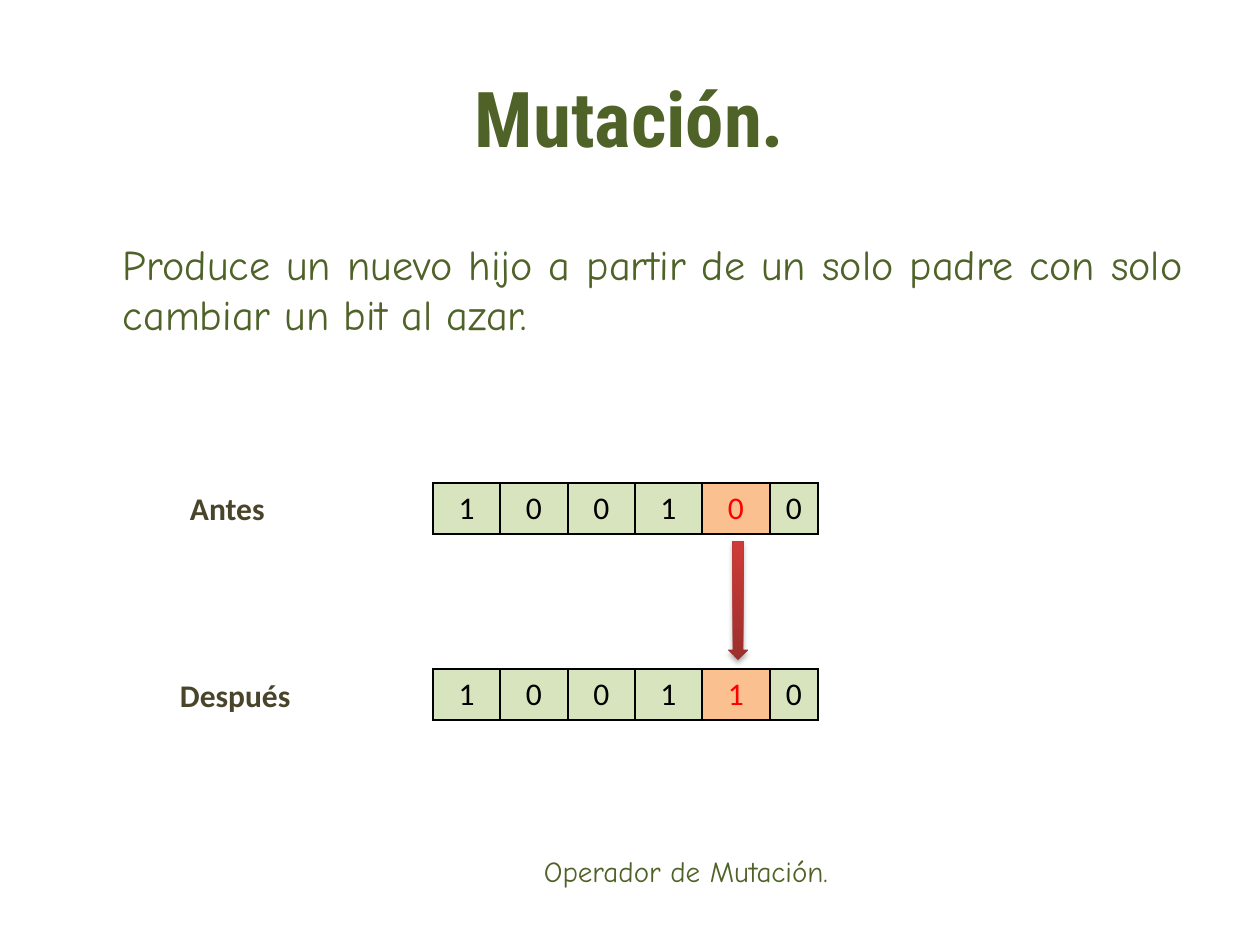
"""Build the slide that explains the mutation operator."""
import pptx
import pptx.dml.color
import pptx.enum.shapes
import pptx.enum.text
import pptx.oxml
import pptx.oxml.ns
import pptx.util

PX = 914400 / 126
ALIGN = pptx.enum.text.PP_ALIGN
ANCHOR = pptx.enum.text.MSO_ANCHOR
THEME = {
    "green": "4F6228", "brown": "4A452A", "ink": "000000", "changed": "FF0000",
    "cell": "D7E4BD", "changed_cell": "FAC090",
    "arrow_bottom": "9C2F2D", "arrow_top": "CE3B37",
    "title_font": "Roboto Condensed", "body_font": "Comic Neue", "label_font": "Calibri",
    "title": 44, "body": 24.1, "caption": 16.6, "label": 18,
}


def px(*lengths):
    return [pptx.util.Emu(round(n * PX)) for n in lengths]


def add_run(p, text, font, size, color, bold=False):
    r = p.add_run()
    r.text = text
    r.font.name = THEME[font]
    r.font.size = pptx.util.Pt(THEME[size])
    r.font.color.rgb = pptx.dml.color.RGBColor.from_string(THEME[color])
    r.font.bold = bold


prs = pptx.Presentation()
prs.slide_width, prs.slide_height = px(1260, 945)
s = prs.slides.add_slide(prs.slide_layouts[5])

title = s.shapes.title
title.left, title.top, title.width, title.height = px(63, 38, 1134, 158)
title.text_frame.vertical_anchor = ANCHOR.MIDDLE
p = title.text_frame.paragraphs[0]
p.alignment = ALIGN.CENTER
add_run(p, "Mutación.", "title_font", "title", "green", True)

texts = [
    ("Produce un nuevo hijo a partir de un solo padre con solo cambiar un bit al azar.",
     (123, 238, 1061, 110), ALIGN.JUSTIFY, "body_font", "body", "green", False),
    ("Operador de Mutación.",
     (544, 853, 320, 40), ALIGN.LEFT, "body_font", "caption", "green", False),
    ("Antes", (190, 489, 110, 38), ALIGN.LEFT, "label_font", "label", "brown", True),
    ("Después", (180, 676, 150, 38), ALIGN.LEFT, "label_font", "label", "brown", True),
]
for text, box, align, font, size, color, bold in texts:
    tf = s.shapes.add_textbox(*px(*box)).text_frame
    tf.word_wrap = True
    tf.margin_left = tf.margin_top = tf.margin_right = tf.margin_bottom = 0
    p = tf.paragraphs[0]
    p.alignment = align
    add_run(p, text, font, size, color, bold)

col_widths = [67, 68, 67, 67, 68, 48]
changed_col = 4
for top, bits in ((483, "100100"), (669, "100110")):
    frame = s.shapes.add_table(1, len(bits), *px(433, top, sum(col_widths), 51))
    table = frame.table
    for col, bit in enumerate(bits):
        changed = col == changed_col
        table.columns[col].width = px(col_widths[col])[0]
        cell = table.cell(0, col)
        p = cell.text_frame.paragraphs[0]
        p.alignment = ALIGN.CENTER
        add_run(p, bit, "label_font", "label", "changed" if changed else "ink")
        for i, side in enumerate(("lnL", "lnR", "lnT", "lnB")):
            border = pptx.oxml.parse_xml(
                f'<a:{side} {pptx.oxml.ns.nsdecls("a")} w="12700"><a:solidFill>'
                f'<a:srgbClr val="{THEME["ink"]}"/></a:solidFill></a:{side}>')
            cell._tc.get_or_add_tcPr().insert(i, border)
        cell.fill.solid()
        fill = THEME["changed_cell" if changed else "cell"]
        cell.fill.fore_color.rgb = pptx.dml.color.RGBColor.from_string(fill)

arrow = s.shapes.add_shape(pptx.enum.shapes.MSO_SHAPE.DOWN_ARROW, *px(728, 541, 20, 119))
arrow.line.fill.background()
arrow.fill.gradient()
arrow.fill.gradient_angle = 90
for stop, color in zip(arrow.fill.gradient_stops, ("arrow_bottom", "arrow_top")):
    stop.color.rgb = pptx.dml.color.RGBColor.from_string(THEME[color])
arrow.shadow.inherit = False
effects = arrow._element.spPr.find(pptx.oxml.ns.qn("a:effectLst"))
effects.append(pptx.oxml.parse_xml(
    f'<a:outerShdw {pptx.oxml.ns.nsdecls("a")} blurRad="39370" dist="22860" dir="5400000" '
    f'rotWithShape="0"><a:srgbClr val="{THEME["ink"]}"><a:alpha val="35000"/>'
    '</a:srgbClr></a:outerShdw>'))

prs.save("out.pptx")
